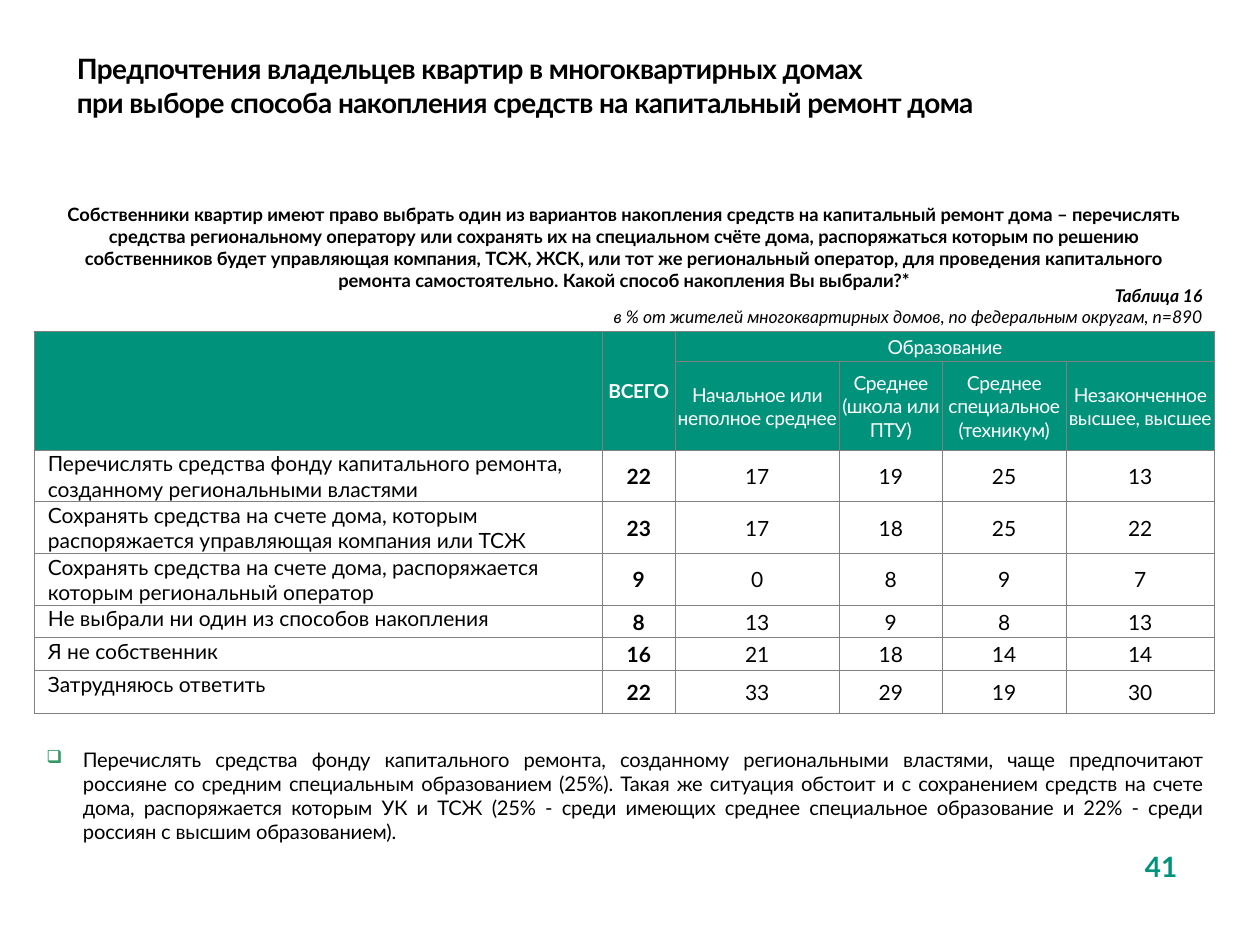
from lxml import etree
from pptx import Presentation
from pptx.dml.color import RGBColor
from pptx.enum.text import MSO_ANCHOR, MSO_AUTO_SIZE, PP_ALIGN
from pptx.oxml.ns import qn
from pptx.util import Inches, Pt

LEFT, CENTER, RIGHT, JUSTIFY = PP_ALIGN.LEFT, PP_ALIGN.CENTER, PP_ALIGN.RIGHT, PP_ALIGN.JUSTIFY
TOP, MIDDLE, BOTTOM = MSO_ANCHOR.TOP, MSO_ANCHOR.MIDDLE, MSO_ANCHOR.BOTTOM
NONE, GROW = MSO_AUTO_SIZE.NONE, MSO_AUTO_SIZE.SHAPE_TO_FIT_TEXT
FONT, BLACK, WHITE, GREEN, GRAY = "Lato", "000000", "FFFFFF", "00927B", "808080"
BULLET, BULLET_COLOR = "❑", "339966"
X, W = 0.27, 9.37

TITLE = ("Предпочтения владельцев квартир в многоквартирных домах \v"
         "при выборе способа накопления средств на капитальный ремонт дома")
QUESTION = ("Собственники квартир имеют право выбрать один из вариантов накопления средств на капитальный "
            "ремонт дома – перечислять средства региональному оператору или сохранять их на специальном счёте "
            "дома, распоряжаться которым по решению собственников будет управляющая компания, ТСЖ, ЖСК, или "
            "тот же региональный оператор, для проведения капитального ремонта самостоятельно. "
            "Какой способ накопления Вы выбрали?*")
CAPTION = ["Таблица 16", "в % от жителей многоквартирных домов, по федеральным округам, n=890"]
COMMENT = ("Перечислять средства фонду капитального ремонта, созданному региональными властями, чаще "
           "предпочитают россияне со средним специальным образованием (25%). Такая же ситуация обстоит и с "
           "сохранением средств на счете дома, распоряжается которым УК и ТСЖ (25% - среди имеющих среднее "
           "специальное образование и 22% - среди россиян с высшим образованием).")
PAGE = "41"

HEADER = [
    ["", "ВСЕГО", "Образование", "", "", ""],
    ["", "", "Начальное или неполное среднее", "Среднее (школа или ПТУ)",
     "Среднее специальное (техникум)", "Незаконченное высшее, высшее"],
]
ANSWERS = [
    ["Перечислять средства фонду капитального ремонта, созданному региональными властями", 22, 17, 19, 25, 13],
    ["Сохранять средства на счете дома, которым распоряжается управляющая компания или ТСЖ", 23, 17, 18, 25, 22],
    ["Сохранять средства на счете дома, распоряжается которым региональный оператор", 9, 0, 8, 9, 7],
    ["Не выбрали ни один из способов накопления", 8, 13, 9, 8, 13],
    ["Я не собственник", 16, 21, 18, 14, 14],
    ["Затрудняюсь ответить", 22, 33, 29, 19, 30],
]
COLS = [4.51, 0.58, 1.3, 0.82, 0.98, 1.18]
ROWS = [0.24, 0.7, 0.4, 0.4, 0.4, 0.26, 0.26, 0.34]
MERGES = [(0, 0, 1, 0), (0, 1, 1, 1), (0, 2, 0, 5)]


def rgb(color):
    """Turn a hex string into a colour."""
    return RGBColor.from_string(color)


def style(p, size, color=BLACK, bold=False, italic=False, align=LEFT, spacing=0):
    """Format a paragraph and its runs."""
    p.alignment = align
    for r in p.runs:
        f = r.font
        f.name, f.size, f.bold, f.italic = FONT, Pt(size), bold, italic
        f.color.rgb = rgb(color)
        if spacing:
            f._element.set("spc", str(round(spacing * 100)))


def add_text(s, box, lines, size, anchor=TOP, auto_size=NONE, **look):
    """Add a wrapped text box and return its text frame."""
    tf = s.shapes.add_textbox(*map(Inches, box)).text_frame
    tf.word_wrap, tf.auto_size, tf.vertical_anchor = True, auto_size, anchor
    tf.text = "\n".join(lines)
    for p in tf.paragraphs:
        style(p, size, **look)
    return tf


def add_bullet(p):
    """Give a paragraph a hanging coloured bullet."""
    pPr = p._p.get_or_add_pPr()
    pPr.set("marL", str(Inches(0.29)))
    pPr.set("indent", str(-Inches(0.29)))
    clr = etree.SubElement(pPr, qn("a:buClr"))
    etree.SubElement(clr, qn("a:srgbClr"), val=BULLET_COLOR)
    etree.SubElement(pPr, qn("a:buSzPct"), val="90000")
    etree.SubElement(pPr, qn("a:buChar"), char=BULLET)


def add_borders(cell):
    """Draw thin lines on the four sides of a cell."""
    tcPr = cell._tc.get_or_add_tcPr()
    for i, side in enumerate(("a:lnL", "a:lnR", "a:lnT", "a:lnB")):
        ln = etree.Element(qn(side), w=str(Pt(0.25)))
        fill = etree.SubElement(ln, qn("a:solidFill"))
        etree.SubElement(fill, qn("a:srgbClr"), val=GRAY)
        tcPr.insert(i, ln)


def fill_cell(cell, value, row, col):
    """Write and format one table cell."""
    header = row < len(HEADER)
    label = not header and col == 0
    cell.text = str(value)
    cell.margin_left = cell.margin_right = cell.margin_top = Inches(0.01)
    cell.margin_bottom = 0
    cell.vertical_anchor = TOP if label else MIDDLE
    p = cell.text_frame.paragraphs[0]
    style(p, 11 if header else 12, WHITE if header else BLACK, bold=col == 1,
          align=LEFT if label else CENTER, spacing=-0.2 if header else 0)
    if label:
        p._p.get_or_add_pPr().set("marL", str(Inches(0.1)))
    if header or col < 2:
        cell.fill.solid()
        cell.fill.fore_color.rgb = rgb(GREEN if header else WHITE)
    else:
        cell.fill.background()
    add_borders(cell)


def add_results(s):
    """Add the table of answers by education."""
    frame = s.shapes.add_table(len(ROWS), len(COLS), *map(Inches, (X, 2.63, W, sum(ROWS))))
    table = frame.table
    table.first_row = table.horz_banding = False
    for column, width in zip(table.columns, COLS):
        column.width = Inches(width)
    for row, height in zip(table.rows, ROWS):
        row.height = Inches(height)
    for i, values in enumerate(HEADER + ANSWERS):
        for j, value in enumerate(values):
            fill_cell(table.cell(i, j), value, i, j)
    for top, left, bottom, right in MERGES:
        table.cell(top, left).merge(table.cell(bottom, right))


def add_title(s):
    """Place and format the title placeholder."""
    sp = s.shapes.title
    sp.left, sp.top, sp.width, sp.height = map(Inches, (0.51, 0.36, 7.65, 0.64))
    tf = sp.text_frame
    tf.text = TITLE.replace("\v", "\n")
    tf.paragraphs[0].text = TITLE
    tf._txBody.remove(tf.paragraphs[1]._p)
    tf.word_wrap, tf.auto_size, tf.vertical_anchor = True, GROW, TOP
    style(tf.paragraphs[0], 16, bold=True, spacing=-0.3)


def main():
    """Build the slide."""
    prs = Presentation()
    prs.slide_width, prs.slide_height = Inches(10), Inches(7.5)
    s = prs.slides.add_slide(prs.slide_layouts[5])
    tf = add_text(s, (X, 5.88, W, 0.87), [COMMENT], 11.5, align=JUSTIFY, spacing=-0.1)
    add_bullet(tf.paragraphs[0])
    tf = add_text(s, (0.65, 2.21, 8.99, 0.61), CAPTION, 10, auto_size=GROW, italic=True, align=RIGHT)
    tf.paragraphs[0].runs[0].font.bold = True
    add_text(s, (8.78, 6.69, 0.87, 0.52), [PAGE], 16, color=GREEN, bold=True, align=CENTER)
    add_title(s)
    add_results(s)
    add_text(s, (X, 1.55, W, 0.81), [QUESTION], 10.5, anchor=BOTTOM, auto_size=GROW, bold=True, align=CENTER)
    prs.save("out.pptx")


if __name__ == "__main__":
    main()
